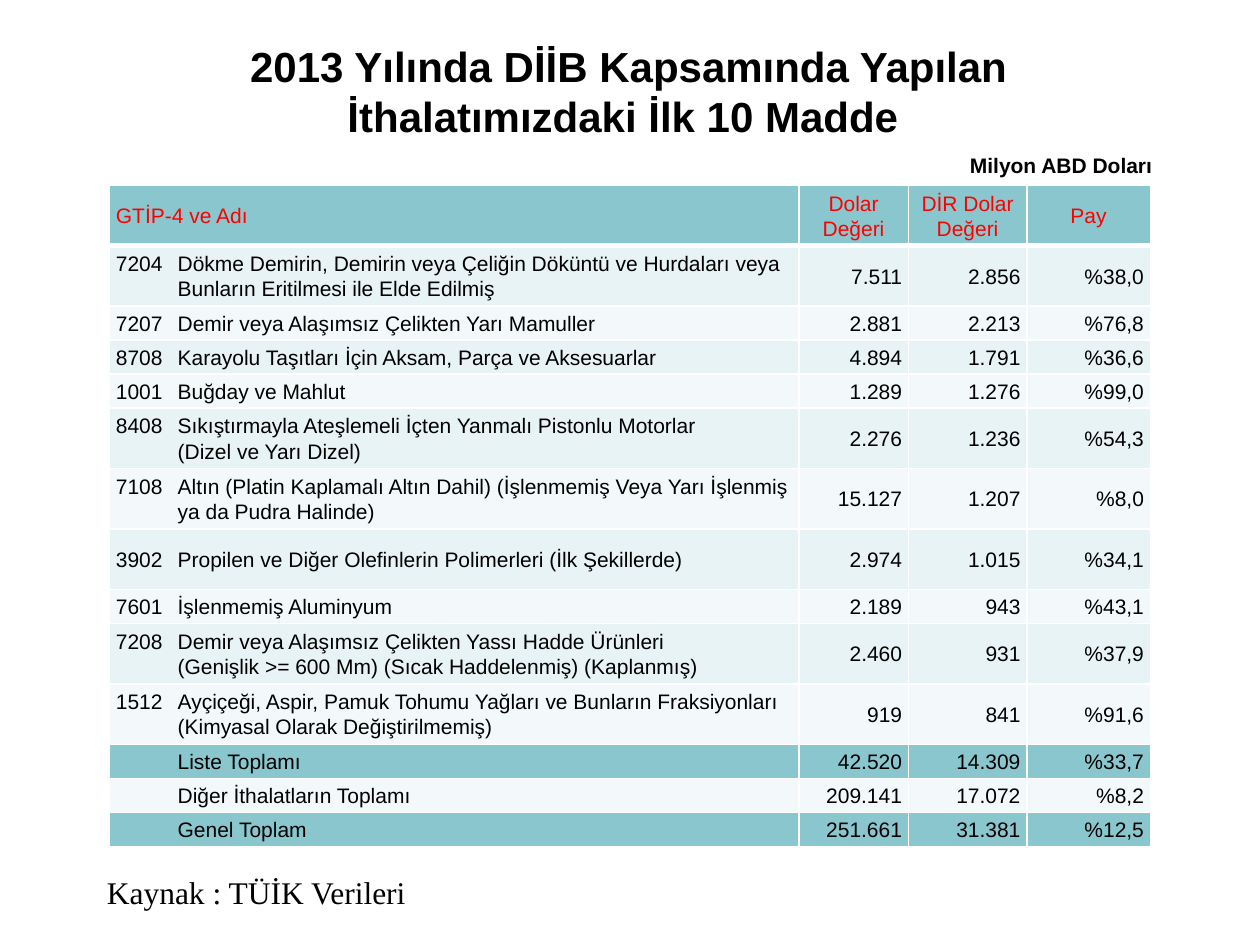
from lxml import etree
from pptx import Presentation
from pptx.dml.color import RGBColor
from pptx.enum.text import MSO_ANCHOR, MSO_AUTO_SIZE, PP_ALIGN
from pptx.oxml.ns import qn
from pptx.util import Inches, Pt

BLACK = RGBColor(0x00, 0x00, 0x00)
RED = RGBColor(0xFF, 0x00, 0x00)
WHITE = RGBColor(0xFF, 0xFF, 0xFF)
TEAL = RGBColor(0x8A, 0xC6, 0xCD)
LIGHT = RGBColor(0xE7, 0xF3, 0xF4)
PALE = RGBColor(0xF3, 0xF9, 0xFA)

TITLE = "2013 Yılında DİİB Kapsamında Yapılan\nİthalatımızdaki İlk 10 Madde "
COL_WIDTHS = [5.47, 0.87, 0.94, 0.98]
TALL, SHORT = 0.48, 0.27
TALL_ROWS = {0, 1, 5, 6, 7, 9, 10}
INDENT = 0.49

HEADER = ["GTİP-4 ve Adı", "Dolar Değeri", "DİR Dolar Değeri", "Pay"]
ITEMS = [
    ["7204\tDökme Demirin, Demirin veya Çeliğin Döküntü ve Hurdaları veya "
     "Bunların Eritilmesi ile Elde Edilmiş", "7.511", "2.856", "%38,0"],
    ["7207\tDemir veya Alaşımsız Çelikten Yarı Mamuller",
     "2.881", "2.213", "%76,8"],
    ["8708\tKarayolu Taşıtları İçin Aksam, Parça ve Aksesuarlar",
     "4.894", "1.791", "%36,6"],
    ["1001\tBuğday ve Mahlut", "1.289", "1.276", "%99,0"],
    ["8408\tSıkıştırmayla Ateşlemeli İçten Yanmalı Pistonlu Motorlar\n"
     "(Dizel ve Yarı Dizel)", "2.276", "1.236", "%54,3"],
    ["7108\tAltın (Platin Kaplamalı Altın Dahil) (İşlenmemiş Veya Yarı "
     "İşlenmiş ya da Pudra Halinde)", "15.127", "1.207", "%8,0"],
    ["3902\tPropilen ve Diğer Olefinlerin Polimerleri (İlk Şekillerde)",
     "2.974", "1.015", "%34,1"],
    ["7601\tİşlenmemiş Aluminyum", "2.189", "943", "%43,1"],
    ["7208\tDemir veya Alaşımsız Çelikten Yassı Hadde Ürünleri\n"
     "(Genişlik >= 600 Mm) (Sıcak Haddelenmiş) (Kaplanmış)",
     "2.460", "931", "%37,9"],
    ["1512\tAyçiçeği, Aspir, Pamuk Tohumu Yağları ve Bunların Fraksiyonları "
     "(Kimyasal Olarak Değiştirilmemiş)", "919", "841", "%91,6"],
]
TOTALS = [
    ["Liste Toplamı", "42.520", "14.309", "%33,7"],
    ["Diğer İthalatların Toplamı", "209.141", "17.072", "%8,2"],
    ["Genel Toplam", "251.661", "31.381", "%12,5"],
]


def set_font(p, size, name="Arial", color=BLACK, bold=False):
    p.font.size = Pt(size)
    p.font.name = name
    p.font.color.rgb = color
    p.font.bold = bold


def place(sp, left, top, width, height):
    sp.left, sp.top = Inches(left), Inches(top)
    sp.width, sp.height = Inches(width), Inches(height)


def add_title(slide):
    sp = slide.shapes.title
    place(sp, 0.43, 0.28, 9.12, 0.88)
    tf = sp.text_frame
    tf.vertical_anchor = MSO_ANCHOR.MIDDLE
    p = tf.paragraphs[0]
    p.text = TITLE
    p.alignment = PP_ALIGN.CENTER
    set_font(p, 24, bold=True)


def add_label(slide, text, box, **font):
    sp = slide.shapes.add_textbox(*map(Inches, box))
    tf = sp.text_frame
    tf.word_wrap = False
    tf.auto_size = MSO_AUTO_SIZE.SHAPE_TO_FIT_TEXT
    p = tf.paragraphs[0]
    p.text = text
    set_font(p, **font)


def set_borders(cell, bottom):
    """Draw white cell borders; call before the fill, which must follow them."""
    tc_pr = cell._tc.get_or_add_tcPr()
    for side, width in (("L", 1), ("R", 1), ("T", 1), ("B", bottom)):
        ln = etree.SubElement(tc_pr, qn(f"a:ln{side}"), w=str(Pt(width)))
        fill = etree.SubElement(ln, qn("a:solidFill"))
        etree.SubElement(fill, qn("a:srgbClr"), val=str(WHITE))


def fill_cell(cell, text, fill, align, color=BLACK, bottom=1):
    cell.vertical_anchor = MSO_ANCHOR.MIDDLE
    cell.margin_left = cell.margin_right = Inches(0.05)
    cell.margin_top = cell.margin_bottom = 0
    set_borders(cell, bottom)
    cell.fill.solid()
    cell.fill.fore_color.rgb = fill
    p = cell.text_frame.paragraphs[0]
    p.text = text
    p.alignment = align
    p.line_spacing = 1.07
    set_font(p, 12, color=color)
    return p


def add_import_table(slide):
    rows = [HEADER] + ITEMS + TOTALS
    heights = [TALL if i in TALL_ROWS else SHORT for i in range(len(rows))]
    frame = slide.shapes.add_table(
        len(rows), len(COL_WIDTHS), Inches(0.87), Inches(1.47),
        Inches(sum(COL_WIDTHS)), Inches(sum(heights)))
    table = frame.table
    for col, width in zip(table.columns, COL_WIDTHS):
        col.width = Inches(width)
    for row, height in zip(table.rows, heights):
        row.height = Inches(height)

    # Header row
    for c, text in enumerate(HEADER):
        align = PP_ALIGN.CENTER if c else PP_ALIGN.LEFT
        fill_cell(table.cell(0, c), text, TEAL, align, RED, bottom=3)

    # Items in alternating bands, then the totals
    bands = [PALE if i % 2 else LIGHT for i in range(len(ITEMS))]
    fills = bands + [TEAL, PALE, TEAL]
    for r, (values, fill) in enumerate(zip(rows[1:], fills), start=1):
        for c, text in enumerate(values):
            align = PP_ALIGN.RIGHT if c else PP_ALIGN.LEFT
            p = fill_cell(table.cell(r, c), text, fill, align)
            if c == 0:
                hanging = -INDENT if "\t" in text else 0
                p_pr = p._p.get_or_add_pPr()
                p_pr.set("marL", str(Inches(INDENT)))
                p_pr.set("indent", str(Inches(hanging)))


def main():
    prs = Presentation()
    prs.slide_width, prs.slide_height = Inches(10), Inches(7.5)
    slide = prs.slides.add_slide(prs.slide_layouts[5])
    add_title(slide)
    add_label(slide, "Kaynak : TÜİK Verileri", (0.75, 6.88, 2.61, 0.6),
              size=18, name="Times New Roman")
    add_import_table(slide)
    add_label(slide, "Milyon ABD Doları", (7.6, 1.16, 1.66, 0.3),
              size=12, bold=True)
    prs.save("out.pptx")


if __name__ == "__main__":
    main()
